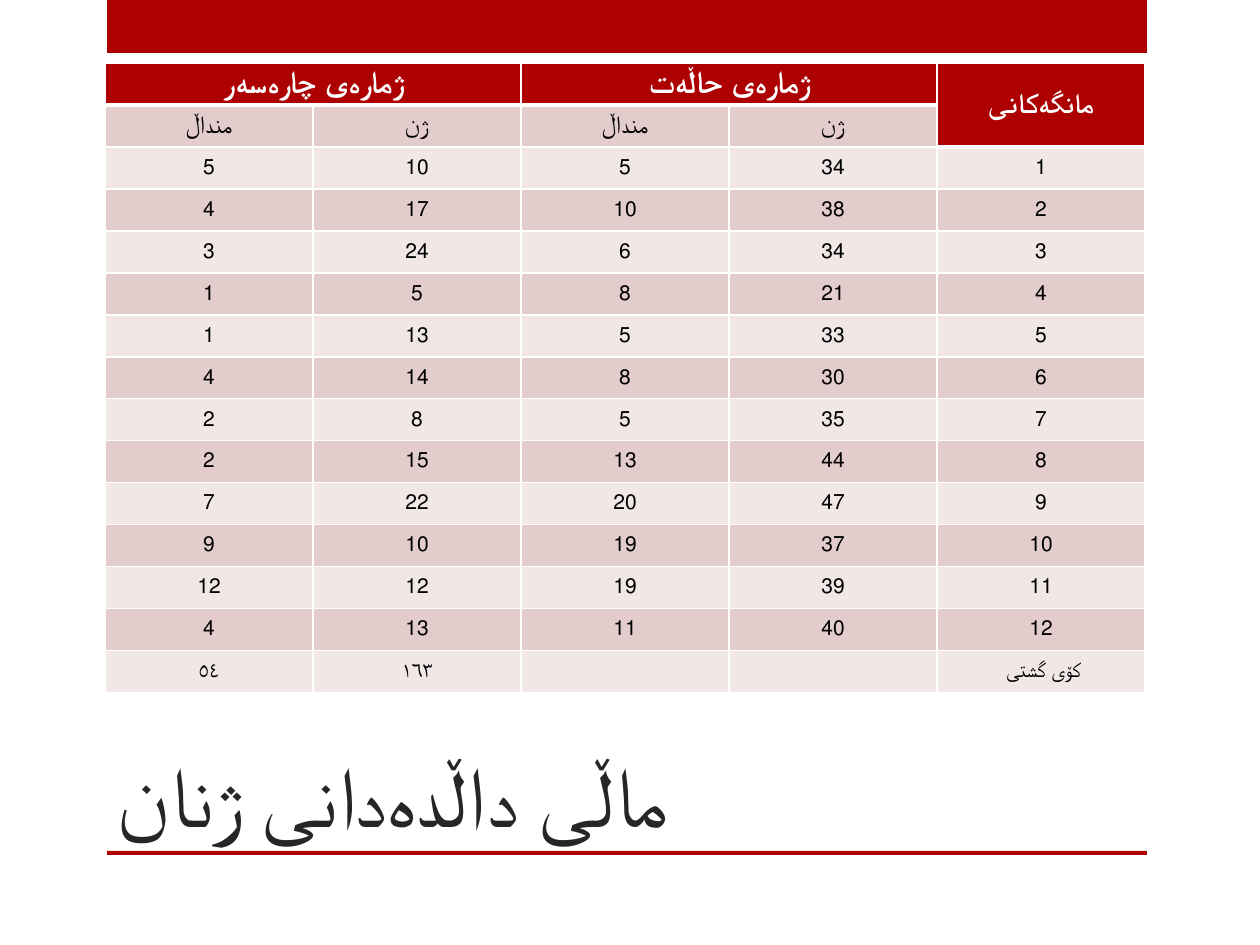
import pptx
import pptx.util
import pptx.dml.color
import pptx.enum.shapes
import pptx.enum.text
import pptx.oxml
import pptx.oxml.ns

PX = 914400 / 126
HUES = {"red": "AD0101", "dark": "E3CCCC", "pale": "F1E7E7",
        "white": "FFFFFF", "black": "000000", "ink": "262626"}
MID = pptx.enum.text.MSO_ANCHOR.MIDDLE


def size(*nums):
    return [pptx.util.Emu(round(n * PX)) for n in nums]


def write(para, text, points, face, hue, bold=False):
    run = para.add_run()
    run.text = text
    run.font.size = pptx.util.Pt(points)
    run.font.name = face
    run.font.bold = bold
    run.font.color.rgb = pptx.dml.color.RGBColor.from_string(HUES[hue])


deck = pptx.Presentation()
deck.slide_width, deck.slide_height = size(1260, 945)
slide = deck.slides.add_slide(deck.slide_layouts[5])

for box in [(107, 0, 1040, 53), (107, 851, 1040, 4)]:
    bar = slide.shapes.add_shape(
        pptx.enum.shapes.MSO_SHAPE.RECTANGLE, *size(*box))
    bar.shadow.inherit = False
    bar.fill.solid()
    bar.fill.fore_color.rgb = pptx.dml.color.RGBColor.from_string(HUES["red"])
    bar.line.fill.background()

title = slide.shapes.title
title.left, title.top, title.width, title.height = size(105, 766, 935, 85)
frame = title.text_frame
frame.auto_size = pptx.enum.text.MSO_AUTO_SIZE.NONE
frame.word_wrap = True
frame.vertical_anchor = pptx.enum.text.MSO_ANCHOR.BOTTOM
frame.paragraphs[0].alignment = pptx.enum.text.PP_ALIGN.LEFT
write(frame.paragraphs[0], "ماڵی داڵدەدانی ژنان", 48, "Calibri", "ink")

rows = [
    ["ژمارەی چارەسەر", "", "ژمارەی حاڵەت", "", "مانگەکانی"],
    ["منداڵ", "ژن", "منداڵ", "ژن", ""],
    [5, 10, 5, 34, 1],
    [4, 17, 10, 38, 2],
    [3, 24, 6, 34, 3],
    [1, 5, 8, 21, 4],
    [1, 13, 5, 33, 5],
    [4, 14, 8, 30, 6],
    [2, 8, 5, 35, 7],
    [2, 15, 13, 44, 8],
    [7, 22, 20, 47, 9],
    [9, 10, 19, 37, 10],
    [12, 12, 19, 39, 11],
    [4, 13, 11, 40, 12],
    ["٥٤", "١٦٣", "", "", "كۆی گشتی "],
]
grid = slide.shapes.add_table(
    len(rows), 5, *size(105, 63, 1040, 42 * len(rows))).table
grid.first_row = False
grid.horz_banding = False
for first, last in [((0, 0), (0, 1)), ((0, 2), (0, 3)), ((0, 4), (1, 4))]:
    grid.cell(*first).merge(grid.cell(*last))

for r, row in enumerate(rows):
    for c, text in enumerate(row):
        head = r == 0 or (r == 1 and c == 4)
        cell = grid.cell(r, c)
        cell.vertical_anchor = MID
        cell.margin_top = cell.margin_bottom = 0
        props = cell._tc.get_or_add_tcPr()
        for side in "LRTB":
            width = 38100 if head and side == "B" else 12700
            props.append(pptx.oxml.parse_xml(
                f'<a:ln{side} {pptx.oxml.ns.nsdecls("a")} w="{width}">'
                f'<a:solidFill><a:srgbClr val="{HUES["white"]}"/></a:solidFill>'
                f'</a:ln{side}>'))
        fill = "red" if head else "dark" if r % 2 else "pale"
        cell.fill.solid()
        cell.fill.fore_color.rgb = pptx.dml.color.RGBColor.from_string(HUES[fill])
        if text == "":
            continue
        para = cell.text_frame.paragraphs[0]
        para.alignment = pptx.enum.text.PP_ALIGN.CENTER
        para._p.get_or_add_pPr().set("rtl", "1")
        if head:
            points = 16 if c == 4 else 18
            write(para, text, points, "Times New Roman", "white", True)
        else:
            write(para, str(text), 14 if r == 1 else 12, "Calibri", "black")

deck.save("out.pptx")
